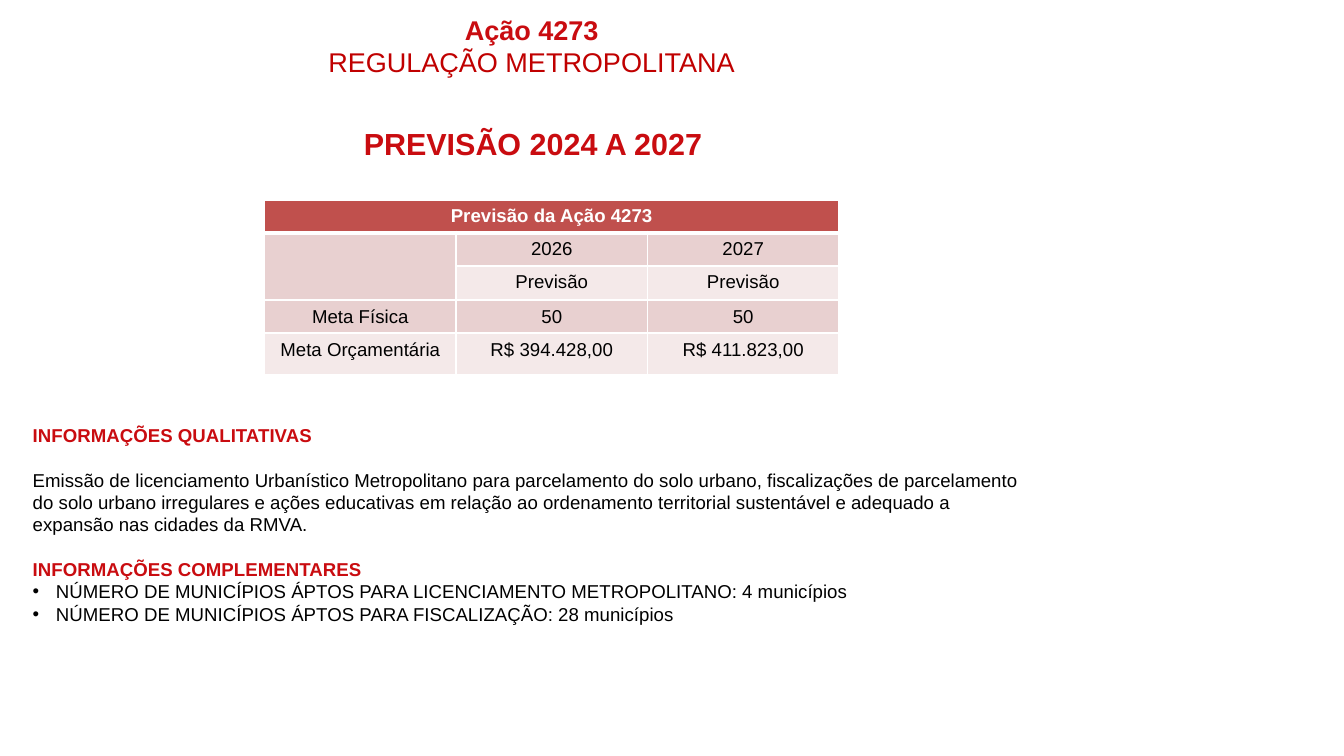
from lxml import etree
from pptx import Presentation
from pptx.dml.color import RGBColor
from pptx.enum.text import MSO_ANCHOR, MSO_AUTO_SIZE, PP_ALIGN
from pptx.oxml.ns import qn
from pptx.util import Inches, Pt

LEFT, CENTER, JUST = PP_ALIGN.LEFT, PP_ALIGN.CENTER, PP_ALIGN.JUSTIFY
TOP = MSO_ANCHOR.TOP
NO_FIT = MSO_AUTO_SIZE.NONE

HUES = {
    "red": "C90C10",
    "dark": "C00000",
    "black": "000000",
    "white": "FFFFFF",
    "head": "C0504D",
    "rose": "E8D0D0",
    "pale": "F4E9E9",
}
HEADS = {"size": 11, "bold": True, "hue": "red"}
BODY = {"size": 11, "bold": False, "hue": "black"}
TITLE = [
    ("Ação 4273", {"size": 16, "bold": True, "hue": "red"}, {"alignment": CENTER}),
    ("REGULAÇÃO METROPOLITANA", {"size": 16, "bold": False, "hue": "dark"},
     {"alignment": CENTER}),
]
PERIOD = [
    ("PREVISÃO 2024 A 2027", {"size": 18, "bold": True, "hue": "red"},
     {"alignment": CENTER}),
]
GAP = Pt(13)
NOTES = [
    ("INFORMAÇÕES QUALITATIVAS", HEADS, {"alignment": LEFT}),
    ("Emissão de licenciamento Urbanístico Metropolitano para parcelamento do solo "
     "urbano, fiscalizações de parcelamento do solo urbano irregulares e ações "
     "educativas em relação ao ordenamento territorial sustentável e adequado a "
     "expansão nas cidades da RMVA.", BODY, {"alignment": LEFT, "space_before": GAP}),
    ("INFORMAÇÕES COMPLEMENTARES", HEADS, {"alignment": JUST, "space_before": GAP}),
]
ITEMS = [
    "NÚMERO DE MUNICÍPIOS ÁPTOS PARA LICENCIAMENTO METROPOLITANO: 4 municípios",
    "NÚMERO DE MUNICÍPIOS ÁPTOS PARA FISCALIZAÇÃO: 28 municípios",
]
ROWS = [
    ["Previsão da Ação 4273", "", ""],
    ["", "2026", "2027"],
    ["", "Previsão", "Previsão"],
    ["Meta Física", "50", "50"],
    ["Meta Orçamentária", "R$ 394.428,00", "R$ 411.823,00"],
]
TALL = [0.24, 0.25, 0.28, 0.27, 0.34]
WIDE = 1.57


def color(name):
    """Return the named colour."""
    return RGBColor.from_string(HUES[name])


def add_run(para, text, style):
    """Add one formatted run to a paragraph."""
    run = para.add_run()
    run.text = text
    look = {"name": "Arial", "size": Pt(style["size"]), "bold": style["bold"]}
    for key, value in look.items():
        setattr(run.font, key, value)
    run.font.color.rgb = color(style["hue"])


def add_para(frame, text, style, form):
    """Fill the first empty paragraph or append a new one."""
    first = frame.paragraphs[0]
    para = frame.add_paragraph() if first.runs else first
    for key, value in form.items():
        setattr(para, key, value)
    add_run(para, text, style)
    return para


def add_item(frame, text):
    """Add a bulleted paragraph."""
    para = add_para(frame, text, BODY, {"alignment": JUST})
    props = para._p.get_or_add_pPr()
    props.set("marL", str(Inches(0.19)))
    props.set("indent", str(-Inches(0.19)))
    etree.SubElement(props, qn("a:buFont"), typeface="Arial")
    etree.SubElement(props, qn("a:buChar"), char="•")


def set_text(shape, area, lines):
    """Place a text shape and write its lines."""
    for key, value in zip(("left", "top", "width", "height"), area):
        setattr(shape, key, Inches(value))
    frame = shape.text_frame
    look = {"word_wrap": True, "auto_size": NO_FIT, "vertical_anchor": TOP}
    for key, value in look.items():
        setattr(frame, key, value)
    for text, style, form in lines:
        add_para(frame, text, style, form)
    return frame


def add_box(slide, area, lines):
    """Add a text box with its lines."""
    box = slide.shapes.add_textbox(*map(Inches, area))
    return set_text(box, area, lines)


def set_edge(cell, side, width):
    """Draw one white cell border."""
    props = cell._tc.get_or_add_tcPr()
    line = etree.SubElement(props, qn("a:" + side), w=str(Pt(width)))
    fill = etree.SubElement(line, qn("a:solidFill"))
    etree.SubElement(fill, qn("a:srgbClr"), val=HUES["white"])


def set_cell(cell, text, row):
    """Format one table cell by its row."""
    head = row == 0
    for side in ("lnL", "lnR", "lnT", "lnB"):
        thick = (head and side == "lnB") or (row == 1 and side == "lnT")
        set_edge(cell, side, 3 if thick else 1)
    cell.fill.solid()
    cell.fill.fore_color.rgb = color("head" if head else "rose" if row % 2 else "pale")
    para = cell.text_frame.paragraphs[0]
    para.alignment = CENTER
    if text:
        add_run(para, text, {"size": 11, "bold": head, "hue": "white" if head else "black"})
    else:
        para._p.get_or_add_endParaRPr().set("sz", "1100")


def add_grid(slide):
    """Add the forecast table."""
    shape = slide.shapes.add_table(
        len(ROWS), len(ROWS[0]), Inches(2.17), Inches(1.64),
        Inches(WIDE * len(ROWS[0])), Inches(sum(TALL)))
    table = shape.table
    for col in table.columns:
        col.width = Inches(WIDE)
    for row, (tall, texts) in enumerate(zip(TALL, ROWS)):
        table.rows[row].height = Inches(tall)
        for col, text in enumerate(texts):
            set_cell(table.cell(row, col), text, row)
    table.cell(0, 0).merge(table.cell(0, 2))
    table.cell(1, 0).merge(table.cell(2, 0))


def main():
    """Build and save the slide."""
    deck = Presentation()
    deck.slide_width, deck.slide_height = Inches(11.02), Inches(6.2)
    slide = deck.slides.add_slide(deck.slide_layouts[5])
    set_text(slide.shapes.title, (0.02, 0.06, 8.68, 0.64), TITLE)
    add_box(slide, (0.03, 0.98, 8.68, 0.4), PERIOD)
    add_grid(slide)
    frame = add_box(slide, (0.17, 3.43, 8.39, 1.77), NOTES)
    for item in ITEMS:
        add_item(frame, item)
    deck.save("out.pptx")


if __name__ == "__main__":
    main()
